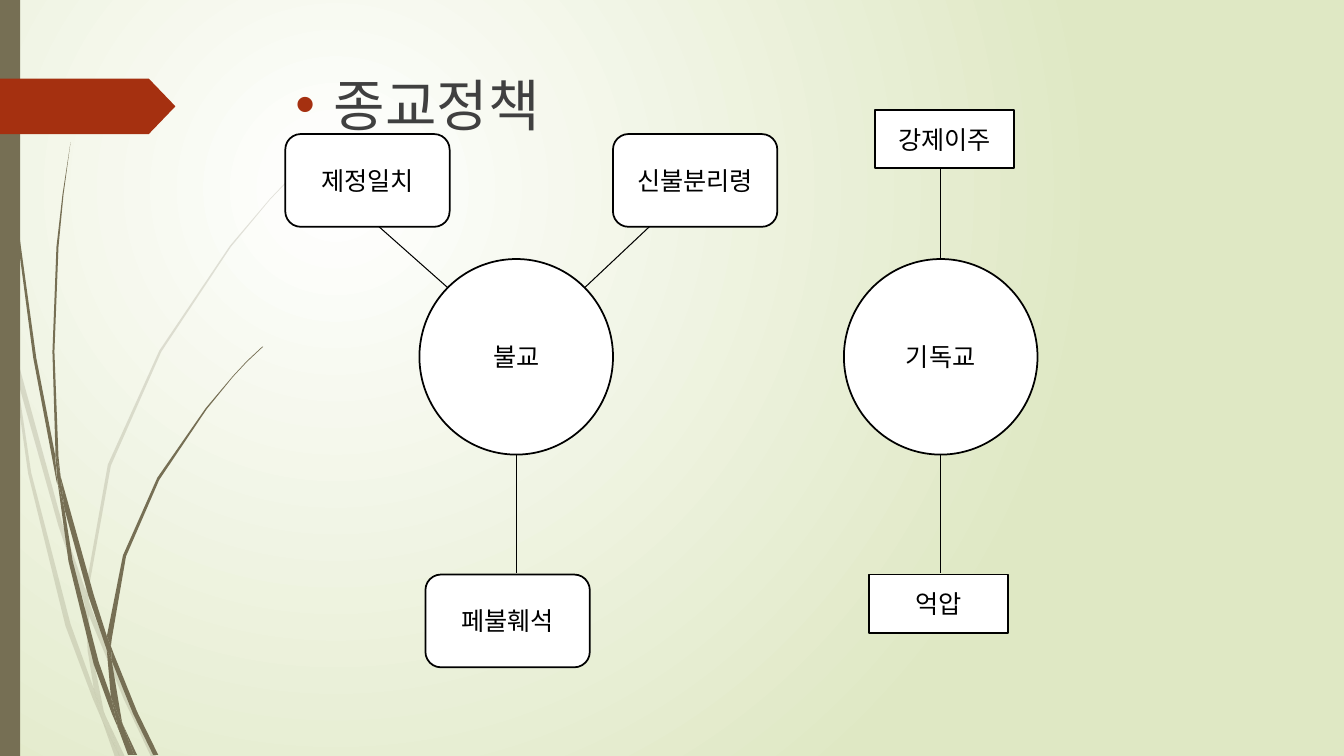
"""Build a slide that maps religious policy towards Buddhism and Christianity."""
from math import cos, radians, sin

from lxml import etree
from pptx import Presentation
from pptx.dml.color import RGBColor
from pptx.enum.shapes import MSO_CONNECTOR, MSO_SHAPE
from pptx.enum.text import MSO_ANCHOR, MSO_AUTO_SIZE, PP_ALIGN
from pptx.oxml.ns import qn
from pptx.util import Inches, Pt

RECT, ROUNDED = MSO_SHAPE.RECTANGLE, MSO_SHAPE.ROUNDED_RECTANGLE
OVAL, PENTAGON = MSO_SHAPE.OVAL, MSO_SHAPE.PENTAGON
STRAIGHT = MSO_CONNECTOR.STRAIGHT
MIDDLE, TOP = MSO_ANCHOR.MIDDLE, MSO_ANCHOR.TOP
CENTER, LEFT = PP_ALIGN.CENTER, PP_ALIGN.LEFT
NO_FIT = MSO_AUTO_SIZE.NONE

COLORS = {"stem": "766F54", "accent": "A53010", "title": "404040", "ink": "000000",
          "paper": "FFFFFF", "edge": "DFE8C4"}
FONT = "League Spartan"
TITLE = "종교정책"
TITLE_BOX = (2.83, 0.65, 9.75, 5.81)
CIRCLE_SIZE = (1.92, 1.94)
BOX_SIZES = {ROUNDED: (1.63, 0.92), RECT: (1.38, 0.58)}

# label, centre, box kind, then (label, left, top, spoke angle, spoke tip)
RELIGIONS = [
    ("불교", (5.12, 3.54), ROUNDED, [
        ("신불분리령", 6.08, 1.33, -45, (6.44, 2.25)),
        ("제정일치", 2.83, 1.33, -135, (3.76, 2.25)),
        ("페불훼석", 4.22, 5.7, 90, (5.12, 5.68))]),
    ("기독교", (9.33, 3.54), RECT, [
        ("강제이주", 8.68, 1.09, -90, (9.33, 1.67)),
        ("억압", 8.62, 5.7, 90, (9.33, 5.68))]),
]

FAINT_STEMS = [
    [(0.11, 3.5), (0.09, 3.22), (0, 2.82), (0, 2.99), (0.1, 3.44)],
    [(0.58, 5.22), (0.84, 5.99), (0.85, 5.86), (0.62, 5.2), (0.14, 3.45), (0.17, 3.76)],
    [(0.92, 6.07), (0.88, 5.96), (0.88, 6.1), (1.23, 6.94), (1.5, 7.51), (1.55, 7.51),
     (1.27, 6.92)],
    [(1.19, 7.51), (1.24, 7.51), (1.05, 7.11)],
    [(0.93, 6.83), (0.7, 6.19), (0.31, 4.69), (0.17, 3.76), (0.11, 3.5), (0.28, 4.7),
     (0.65, 6.21), (0.92, 6.93), (1.01, 7.14), (0.99, 7.07)],
    [(0.84, 5.99), (0.87, 6.46), (0.93, 6.83), (0.96, 6.92), (1.05, 7.11), (1.03, 7.06),
     (0.91, 6.46), (0.88, 6.1), (0.88, 6.08)],
    [(0.88, 5.84), (1.1, 4.62), (1.6, 3.49), (2.29, 2.45), (2.68, 1.98), (2.9, 1.75),
     (3.12, 1.54), (3.12, 1.53), (2.89, 1.75), (2.68, 1.97), (2.28, 2.44), (1.58, 3.48),
     (1.07, 4.61), (0.85, 5.84), (0.85, 5.86), (0.88, 5.96)],
    [(1.01, 7.14), (1.14, 7.51), (1.19, 7.51)],
    [(0.88, 6.08), (0.88, 6.1), (0.88, 5.96), (0.85, 5.86), (0.84, 5.99)],
    [(0.96, 6.92), (0.93, 6.83), (0.99, 7.07), (1.01, 7.14), (1.19, 7.51), (1.05, 7.11)],
]
SOLID_STEMS = [
    [(0.07, 1.1), (0.17, 2.33), (0.33, 3.55), (0.56, 4.77), (0.57, 4.81), (0.55, 4.57),
     (0.55, 4.53), (0.36, 3.55), (0.19, 2.32), (0.08, 1.09), (0.05, 0.48), (0.04, 0),
     (0.03, 0), (0.04, 0.48)],
    [(0.88, 5.92), (1.06, 6.45), (1.06, 6.33), (1.06, 6.31), (0.93, 5.9), (0.6, 4.72),
     (0.64, 5.05)],
    [(1.13, 6.49), (1.1, 6.41), (1.11, 6.56), (1.32, 7.08), (1.52, 7.49), (1.57, 7.49),
     (1.36, 7.06)],
    [(1.1, 6.91), (0.98, 6.57), (0.72, 5.56), (0.64, 5.05), (0.57, 4.77), (0.68, 5.57),
     (0.93, 6.59), (1.11, 7.08), (1.17, 7.22), (1.16, 7.17)],
    [(0.6, 4.72), (0.58, 4.53), (0.54, 3.49), (0.58, 2.45), (0.63, 1.93), (0.7, 1.41),
     (0.62, 1.93), (0.56, 2.45), (0.52, 3.49), (0.55, 4.49)],
    [(1.33, 7.49), (1.36, 7.49), (1.22, 7.19)],
    [(0.57, 4.77), (0.64, 5.05), (0.6, 4.72), (0.55, 4.49), (0.55, 4.53)],
    [(1.11, 6.33), (1.25, 5.52), (1.58, 4.76), (2.05, 4.06), (2.31, 3.74), (2.45, 3.59),
     (2.61, 3.44), (2.6, 3.44), (2.45, 3.58), (2.31, 3.73), (2.04, 4.05), (1.56, 4.74),
     (1.22, 5.51), (1.06, 6.31), (1.1, 6.41)],
    [(1.17, 7.22), (1.27, 7.49), (1.31, 7.49)],
    [(1.06, 6.45), (1.1, 6.91), (1.16, 7.06), (1.22, 7.19), (1.21, 7.16), (1.11, 6.56),
     (1.09, 6.51)],
    [(1.06, 6.45), (1.09, 6.51), (1.11, 6.56), (1.1, 6.41), (1.06, 6.31), (1.06, 6.33)],
    [(1.16, 7.06), (1.1, 6.91), (1.16, 7.17), (1.17, 7.22), (1.3, 7.49), (1.33, 7.49),
     (1.22, 7.19)],
]


def rgb(name):
    return RGBColor.from_string(COLORS[name])


def add_xml(parent, tag, **attributes):
    return etree.SubElement(parent, qn(tag), attributes)


def format_text(frame, text, frame_format, align, size, color):
    for key, value in frame_format.items():
        setattr(frame, key, value)
    paragraph = frame.paragraphs[0]
    paragraph.alignment = align
    run = paragraph.add_run()
    run.text = text
    for key, value in {"name": FONT, "size": Pt(size)}.items():
        setattr(run.font, key, value)
    run.font.color.rgb = rgb(color)
    return paragraph


def paint(shape, fill, line=None):
    shape.shadow.inherit = False
    shape.fill.solid()
    shape.fill.fore_color.rgb = rgb(fill)
    if line:
        shape.line.color.rgb = rgb(line)
        shape.line.width = Pt(1.25)
    else:
        shape.line.fill.background()


def add_figure(shapes, kind, box, fill, line=None):
    figure = shapes.add_shape(kind, *map(Inches, box))
    paint(figure, fill, line)
    return figure


def add_label(shapes, kind, box, text):
    figure = add_figure(shapes, kind, box, "paper", "ink")
    format_text(figure.text_frame, text, {"vertical_anchor": MIDDLE, "word_wrap": True},
                CENTER, 18, "ink")


def add_stem(shapes, points, opacity):
    outline = [(Inches(x), Inches(y)) for x, y in points]
    builder = shapes.build_freeform(*outline[0])
    builder.add_line_segments(outline[1:], close=True)
    stem = builder.convert_to_shape()
    paint(stem, "stem")
    if opacity < 100:
        color = stem._element.spPr.find(".//" + qn("a:srgbClr"))
        add_xml(color, "a:alpha", val=str(opacity * 1000))


def add_spoke(shapes, start, end):
    spoke = shapes.add_connector(STRAIGHT, *map(Inches, (*start, *end)))
    spoke.line.color.rgb = rgb("ink")
    spoke.line.width = Pt(0.75)
    add_xml(spoke._element.spPr, "a:effectLst")


def set_background(slide):
    fill = slide.background.fill
    fill.gradient()
    for stop, name, position in zip(fill.gradient_stops, ("paper", "edge"), (0, 1)):
        stop.color.rgb = rgb(name)
        stop.position = position
    gradient = slide._element.find(".//" + qn("a:gradFill"))
    gradient.remove(gradient.find(qn("a:lin")))
    circle = add_xml(gradient, "a:path", path="circle")
    add_xml(circle, "a:fillToRect", l="50000", t="50000", r="100000", b="100000")


def set_title(title):
    for key, value in zip(("left", "top", "width", "height"), TITLE_BOX):
        setattr(title, key, Inches(value))
    paragraph = format_text(title.text_frame, TITLE,
                            {"vertical_anchor": TOP, "word_wrap": True, "auto_size": NO_FIT},
                            LEFT, 40, "title")
    paragraph.space_before = Pt(10)
    properties = paragraph._p.get_or_add_pPr()
    properties.set("marL", str(Inches(0.38)))
    properties.set("indent", str(-Inches(0.38)))
    add_xml(add_xml(properties, "a:buClr"), "a:srgbClr", val=COLORS["accent"])
    add_xml(properties, "a:buFont", typeface="Arial")
    add_xml(properties, "a:buChar", char="•")


def main():
    deck = Presentation()
    deck.slide_width, deck.slide_height = Inches(13.33), Inches(7.5)
    slide = deck.slides.add_slide(deck.slide_layouts[5])
    shapes = slide.shapes
    set_background(slide)
    set_title(shapes.title)
    for stems, opacity in ((FAINT_STEMS, 20), (SOLID_STEMS, 100)):
        for points in stems:
            add_stem(shapes, points, opacity)
    add_figure(shapes, RECT, (0, 0, 0.2, 7.5), "stem")
    marker = add_figure(shapes, PENTAGON, (0, 0.78, 1.74, 0.55), "accent")
    marker.adjustments[0] = 0.48
    width, height = CIRCLE_SIZE
    for religion, (x, y), kind, policies in RELIGIONS:
        add_label(shapes, OVAL, (x - width / 2, y - height / 2, width, height), religion)
        for policy, left, top, angle, tip in policies:
            turn = radians(angle)
            rim = (x + width / 2 * cos(turn), y + height / 2 * sin(turn))
            add_spoke(shapes, rim, tip)
            add_label(shapes, kind, (left, top, *BOX_SIZES[kind]), policy)
    deck.save("out.pptx")


if __name__ == "__main__":
    main()
